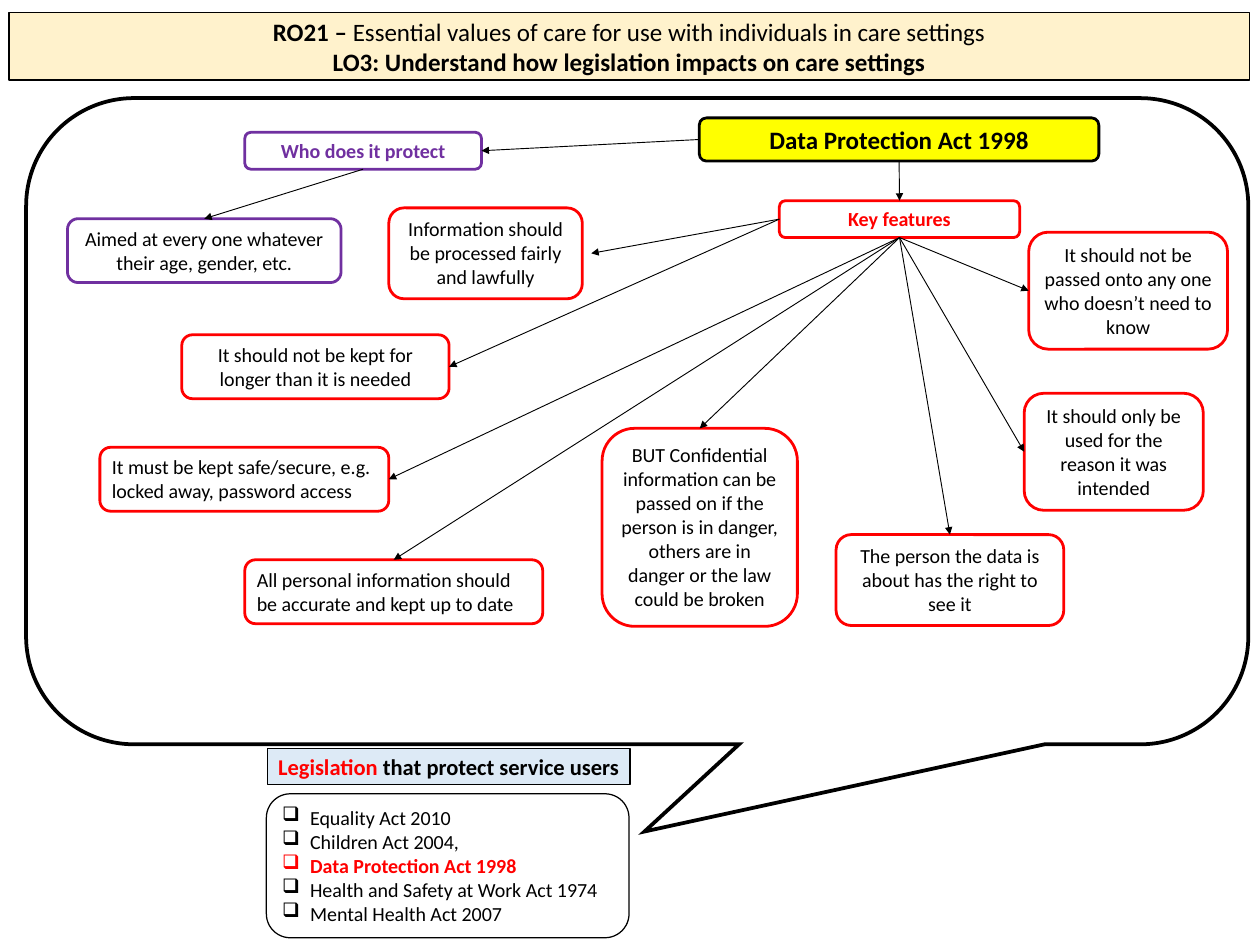
from lxml.etree import SubElement
from pptx import Presentation
from pptx.dml.color import RGBColor
from pptx.enum.shapes import MSO_CONNECTOR, MSO_SHAPE
from pptx.enum.text import MSO_ANCHOR, MSO_AUTO_SIZE, PP_ALIGN
from pptx.oxml.ns import qn
from pptx.util import Inches, Pt

BLACK = RGBColor(0x00, 0x00, 0x00)
WHITE = RGBColor(0xFF, 0xFF, 0xFF)
RED = RGBColor(0xFF, 0x00, 0x00)
PURPLE = RGBColor(0x70, 0x30, 0xA0)
YELLOW = RGBColor(0xFF, 0xFF, 0x00)
CREAM = RGBColor(0xFF, 0xF2, 0xCC)
PALE_BLUE = RGBColor(0xDD, 0xEA, 0xF6)

FONT = "Calibri"
TOP, LEFT, BOTTOM, RIGHT = range(4)  # connection sites of a rounded box


def add_box(slide, kind, box, fill=None, line=BLACK, width=1):
    shape = slide.shapes.add_shape(kind, *[Inches(length) for length in box])
    shape.shadow.inherit = False
    if fill is None:
        shape.fill.background()
    else:
        shape.fill.solid()
        shape.fill.fore_color.rgb = fill
    shape.line.color.rgb = line
    shape.line.width = Pt(width)
    return shape


def write(shape, paragraphs, size, align=PP_ALIGN.CENTER, grow=True):
    """Fill a shape with paragraphs, each a list of (text, colour, bold) runs."""
    frame = shape.text_frame
    frame.word_wrap = True
    frame.vertical_anchor = MSO_ANCHOR.TOP if grow else MSO_ANCHOR.MIDDLE
    if grow:
        frame.auto_size = MSO_AUTO_SIZE.SHAPE_TO_FIT_TEXT
    for index, runs in enumerate(paragraphs):
        paragraph = frame.add_paragraph() if index else frame.paragraphs[0]
        paragraph.alignment = align
        for text, color, bold in runs:
            run = paragraph.add_run()
            run.text = text
            run.font.name = FONT
            run.font.size = Pt(size)
            run.font.bold = bold
            run.font.color.rgb = color


def add_bullet(paragraph, color):
    properties = paragraph._p.get_or_add_pPr()
    indent = Inches(0.31)
    properties.set("marL", str(indent))
    properties.set("indent", str(-indent))
    bullet_color = SubElement(properties, qn("a:buClr"))
    SubElement(bullet_color, qn("a:srgbClr"), val=str(color))
    SubElement(properties, qn("a:buChar"), char="❑")


def add_arrow(slide, start, start_site, end, end_site, gap=0):
    """Join two boxes; a gap leaves the head that far right of the end box."""
    connector = slide.shapes.add_connector(MSO_CONNECTOR.STRAIGHT, 0, 0, 0, 0)
    connector.begin_connect(start, start_site)
    if gap:
        connector.end_x = end.left + end.width + Inches(gap)
        connector.end_y = end.top + end.height // 2
    else:
        connector.end_connect(end, end_site)
    connector.line.color.rgb = BLACK
    connector.line.width = Pt(0.75)
    SubElement(connector.line._get_or_add_ln(), qn("a:tailEnd"), type="triangle")
    SubElement(connector._element.spPr, qn("a:effectLst"))


def add_header(slide, box):
    header = add_box(slide, MSO_SHAPE.FLOWCHART_PROCESS, box, CREAM)
    write(header, [
        [("RO21 – ", BLACK, True),
         ("Essential values of care for use with individuals in care settings", BLACK, False)],
        [("LO3: Understand how legislation impacts on care settings", BLACK, True)],
    ], 20, grow=False)


def add_legislation(slide, box):
    left, top, width, height = box
    title_height, list_offset = 0.4, 0.5

    # Panel title
    title = add_box(slide, MSO_SHAPE.RECTANGLE, (left + 0.01, top, width, title_height), PALE_BLUE)
    write(title, [[("Legislation ", RED, True), ("that protect service users", BLACK, True)]], 18)

    # List of acts, with the current one in red
    acts = [
        ("Equality Act 2010", BLACK, False),
        ("Children Act 2004,", BLACK, False),
        ("Data Protection Act 1998", RED, True),
        ("Health and Safety at Work Act 1974", BLACK, False),
        ("Mental Health Act 2007", BLACK, False),
    ]
    panel = add_box(slide, MSO_SHAPE.ROUNDED_RECTANGLE,
                    (left, top + list_offset, width, height - list_offset), WHITE)
    write(panel, [[act] for act in acts], 16, PP_ALIGN.LEFT)
    for paragraph, (_, color, _) in zip(panel.text_frame.paragraphs, acts):
        add_bullet(paragraph, color)


def add_act_map(slide, box):
    left, top = box[:2]

    # Speech bubble
    bubble = add_box(slide, MSO_SHAPE.ROUNDED_RECTANGULAR_CALLOUT, box, width=3)
    for index, value in enumerate((0.006, 0.635, 0.167)):
        bubble.adjustments[index] = value
    SubElement(bubble.line._get_or_add_ln(), qn("a:miter"), lim="800000")

    def node(text, place, line, fill=None, color=BLACK, bold=False, size=16,
             align=PP_ALIGN.CENTER):
        x, y, width, height = place
        shape = add_box(slide, MSO_SHAPE.ROUNDED_RECTANGLE,
                        (left + x, top + y, width, height), fill, line, 2.25)
        write(shape, [[(text, color, bold)]], size, align)
        return shape

    # Headings and the purple branch
    act = node("Data Protection Act 1998", (7.48, 0.22, 4.44, 0.48), BLACK, YELLOW,
               bold=True, size=20)
    features = node("Key features", (8.37, 1.14, 2.67, 0.41), RED, WHITE, RED, True)
    question = node("Who does it protect", (2.43, 0.38, 2.63, 0.41), PURPLE, WHITE, PURPLE, True)
    answer = node("Aimed at every one whatever their age, gender, etc.",
                  (0.46, 1.34, 3.04, 0.71), PURPLE)
    add_arrow(slide, act, LEFT, question, RIGHT)
    add_arrow(slide, question, BOTTOM, answer, TOP)
    add_arrow(slide, act, BOTTOM, features, TOP)

    # Key features: text, place, alignment, start site, end site, gap
    center, flush = PP_ALIGN.CENTER, PP_ALIGN.LEFT
    branches = [
        ("It should only be used for the reason it was intended",
         (11.09, 3.28, 1.99, 1.3), center, BOTTOM, LEFT, 0),
        ("All personal information should be accurate and kept up to date",
         (2.43, 5.13, 3.31, 0.71), flush, BOTTOM, TOP, 0),
        ("It should not be kept for longer than it is needed",
         (1.73, 2.63, 2.97, 0.71), center, LEFT, RIGHT, 0),
        ("It must be kept safe/secure, e.g. locked away, password access",
         (0.82, 3.88, 3.21, 0.71), flush, BOTTOM, RIGHT, 0),
        ("It should not be passed onto any one who doesn’t need to know",
         (11.14, 1.49, 2.21, 1.3), center, BOTTOM, LEFT, 0),
        ("The person the data is about has the right to see it",
         (9, 4.85, 2.53, 1.01), center, BOTTOM, TOP, 0),
        ("Information should be processed fairly and lawfully",
         (4.03, 1.22, 2.15, 1.01), center, LEFT, RIGHT, 0.1),
        ("BUT Confidential information can be passed on if the person is in danger, "
         "others are in danger or the law could be broken",
         (6.4, 3.67, 2.17, 2.2), center, BOTTOM, TOP, 0),
    ]
    for text, place, align, start_site, end_site, gap in branches:
        feature = node(text, place, RED, align=align)
        add_arrow(slide, features, start_site, feature, end_site, gap)


def main():
    presentation = Presentation()
    presentation.slide_width = Inches(14)
    presentation.slide_height = Inches(10.5)
    slide = presentation.slides.add_slide(presentation.slide_layouts[6])
    add_header(slide, (0.1, 0.14, 13.78, 0.75))
    add_legislation(slide, (2.96, 8.32, 4.03, 2.1))
    add_act_map(slide, (0.29, 1.09, 13.58, 7.18))
    presentation.save("out.pptx")


if __name__ == "__main__":
    main()
